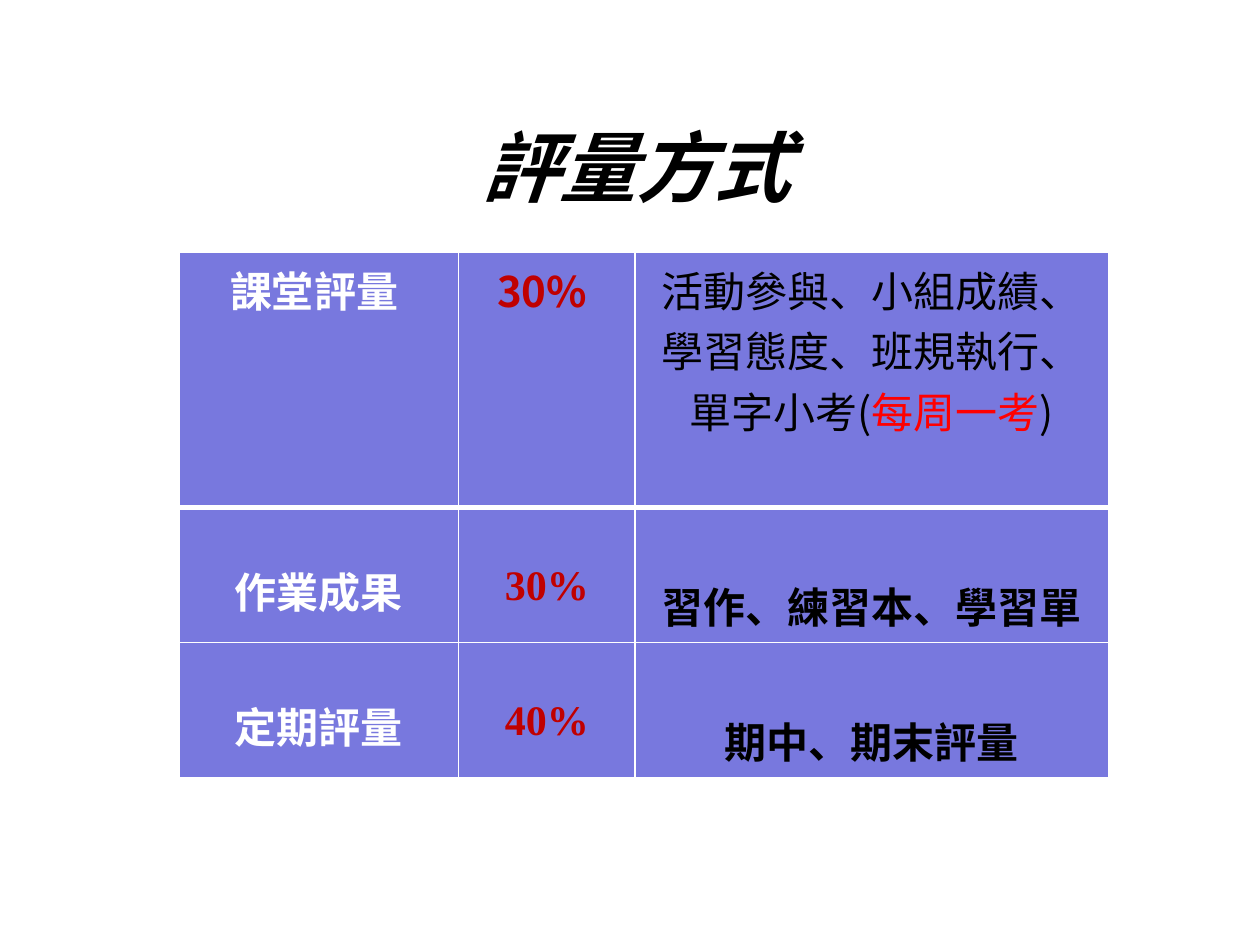
from lxml import etree
from pptx import Presentation
from pptx.dml.color import RGBColor
from pptx.enum import text
from pptx.oxml import ns
from pptx.util import Inches, Pt

BLACK = RGBColor(0, 0, 0)
WHITE = RGBColor(255, 255, 255)
RED = RGBColor(255, 0, 0)
CRIMSON = RGBColor(0xC0, 0, 0)
VIOLET = RGBColor(0x78, 0x78, 0xDE)
SANS, SERIF, COMIC = "Noto Sans CJK SC", "Times New Roman", "Comic Neue"


class Deck:
    def __init__(self, width, height):
        self.deck = Presentation()
        self.deck.slide_width = self.width = Inches(width)
        self.deck.slide_height = self.height = Inches(height)
        self.slide = self.deck.slides.add_slide(self.deck.slide_layouts[6])

    def across(self, share):
        return round(self.width * share)

    def down(self, share):
        return round(self.height * share)

    def box(self, left, top, width, height):
        return (self.across(left), self.down(top),
                self.across(width), self.down(height))

    def letter(self, frame, lines, size, face=SANS, bold=True, italic=False,
               space=None):
        frame.text = "\n".join(line[0][0] for line in lines)
        for para, line in zip(frame.paragraphs, lines):
            para.alignment = text.PP_ALIGN.CENTER
            para.line_spacing = space
            for words, _ in line[1:]:
                para.add_run().text = words
            for run, (_, color) in zip(para.runs, line):
                font = run.font
                font.name, font.size = face, Pt(size)
                font.bold, font.italic = bold, italic
                font.color.rgb = color
                asian = etree.SubElement(font._element, ns.qn("a:ea"))
                asian.set("typeface", SANS)

    def title(self, words, *place):
        frame = self.slide.shapes.add_textbox(*self.box(*place)).text_frame
        frame.word_wrap = True
        frame.vertical_anchor = text.MSO_ANCHOR.MIDDLE
        self.letter(frame, [[(words, BLACK)]], 44, COMIC, italic=True)

    def edge(self, cell, **widths):
        props = cell._tc.get_or_add_tcPr()
        for spot, (side, width) in enumerate(widths.items()):
            line = etree.Element(ns.qn("a:ln" + side), w=str(int(Pt(width))))
            fill = etree.SubElement(line, ns.qn("a:solidFill"))
            etree.SubElement(fill, ns.qn("a:srgbClr"), val=str(WHITE))
            props.insert(spot, line)

    def table(self, left, top, cols, rows, cells):
        place = self.box(left, top, sum(cols), sum(rows))
        grid = self.slide.shapes.add_table(len(rows), len(cols), *place).table
        for col, share in zip(grid.columns, cols):
            col.width = self.across(share)
        for row, share in zip(grid.rows, rows):
            row.height = self.down(share)
        for r, line in enumerate(cells):
            for c, lines in enumerate(line):
                cell = grid.cell(r, c)
                cell.fill.solid()
                cell.fill.fore_color.rgb = VIOLET
                self.edge(cell, L=1, R=1, T=3 if r == 1 else 1,
                          B=3 if r == 0 else 1)
                face, space = SANS, None
                if r:
                    cell.vertical_anchor = text.MSO_ANCHOR.MIDDLE
                    face = SERIF if c == 1 else SANS
                    space = 2.0 if c == 2 else 1.5
                self.letter(cell.text_frame, lines, 24, face,
                            bold=(r, c) != (0, 2), space=space)

    def save(self):
        self.deck.save("out.pptx")


def line(words, color):
    return [[(words, color)]]


def main():
    deck = Deck(10, 7.5)
    deck.title("評量方式", 0.08, 0.09, 0.85, 0.17)
    tasks = [
        [("活動參與、小組成績、", BLACK)],
        [("學習態度、班規執行、", BLACK)],
        [("單字小考(", BLACK), ("每周一考", RED), (")", BLACK)],
    ]
    cells = [
        [line("課堂評量 ", WHITE), line("30% ", CRIMSON), tasks],
        [line("作業成果", WHITE), line("30%", CRIMSON),
         line("習作、練習本、學習單", BLACK)],
        [line("定期評量", WHITE), line("40%", CRIMSON),
         line("期中、期末評量", BLACK)],
    ]
    inch = 1 / 7.5
    deck.table(1.42 / 10, 2 * inch, [2.22 / 10, 1.4 / 10, 3.76 / 10],
               [2.03 * inch, 1.07 * inch, 1.07 * inch], cells)
    deck.save()


if __name__ == "__main__":
    main()
